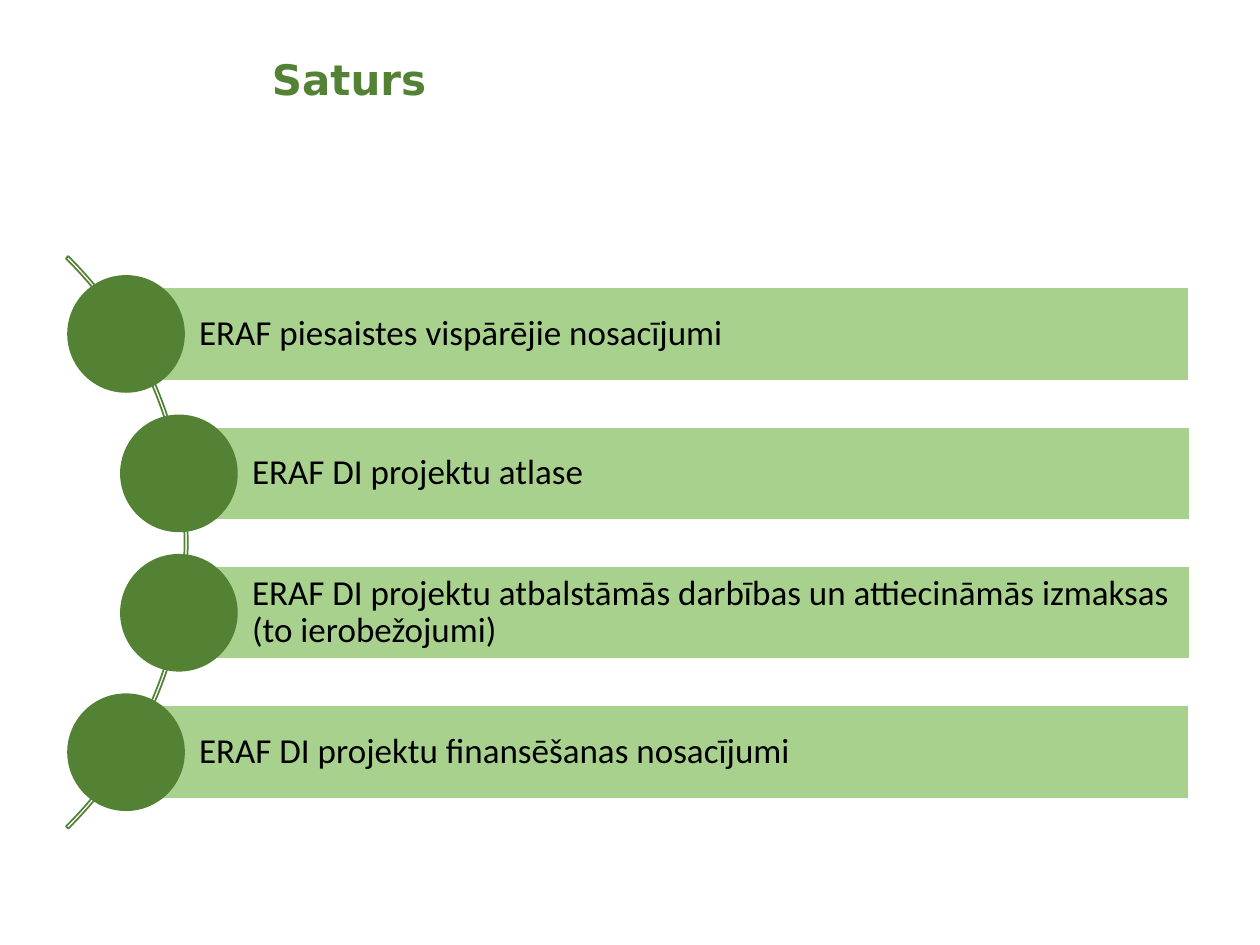
import pptx
import pptx.util
import pptx.dml.color
import pptx.enum.shapes
import pptx.enum.text

Inches = pptx.util.Inches
Pt = pptx.util.Pt
RGBColor = pptx.dml.color.RGBColor
KIND = pptx.enum.shapes.MSO_SHAPE
ANCHOR = pptx.enum.text.MSO_ANCHOR
ALIGN = pptx.enum.text.PP_ALIGN

DARK = RGBColor(0x54, 0x82, 0x35)
LIGHT = RGBColor(0xA9, 0xD1, 0x8E)
WHITE = RGBColor(0xFF, 0xFF, 0xFF)
BLACK = RGBColor(0x00, 0x00, 0x00)

ITEMS = [
    (1.0, "ERAF piesaistes vispārējie nosacījumi"),
    (1.42, "ERAF DI projektu atlase"),
    (1.42, "ERAF DI projektu atbalstāmās darbības un attiecināmās izmaksas (to ierobežojumi)"),
    (1.0, "ERAF DI projektu finansēšanas nosacījumi"),
]
RIGHT = 9.44
FIRST = 2.65
LAST = 5.97
HIGH = 0.74
ROUND = 0.92


def write(shape, text, size, color, font="Calibri", bold=False,
          anchor=ANCHOR.MIDDLE, inset=(0.58, 0.06, 0.06, 0.06)):
    """Put one formatted paragraph into a shape."""
    frame = shape.text_frame
    frame.word_wrap = True
    frame.vertical_anchor = anchor
    (frame.margin_left, frame.margin_top,
     frame.margin_right, frame.margin_bottom) = map(Inches, inset)
    para = frame.paragraphs[0]
    para.alignment = ALIGN.LEFT
    para.line_spacing = 0.9
    run = para.add_run()
    run.text = text
    run.font.name = font
    run.font.size = Pt(size)
    run.font.bold = bold
    run.font.color.rgb = color


def draw(slide, kind, left, top, width, height, fill, line):
    """Add a flat preset shape; a fill of None leaves it hollow."""
    shape = slide.shapes.add_shape(
        kind, Inches(left), Inches(top), Inches(width), Inches(height))
    shape.shadow.inherit = False
    if fill is None:
        shape.fill.background()
    else:
        shape.fill.solid()
        shape.fill.fore_color.rgb = fill
    shape.line.color.rgb = line
    shape.line.width = Pt(1)
    return shape


def add_title(slide):
    """Add the slide heading."""
    box = slide.shapes.add_textbox(
        Inches(2.06), Inches(0.42), Inches(7.44), Inches(1.13))
    write(box, "Saturs", 24, DARK, font="DejaVu Sans", bold=True,
          anchor=ANCHOR.TOP, inset=(0.1, 0.05, 0.1, 0.05))


def add_arc(slide):
    """Add the thin arc that runs behind the circles."""
    arc = draw(slide, KIND.BLOCK_ARC, -4.95, 1.1, 6.44, 6.41, None, DARK)
    for i, value in enumerate((189, 27, 0.004)):
        arc.adjustments[i] = value


def add_item(slide, left, mid, text):
    """Add a bar with its circle centred on the bar's left edge."""
    bar = draw(slide, KIND.RECTANGLE, left, mid - HIGH / 2,
               RIGHT - left, HIGH, LIGHT, WHITE)
    write(bar, text, 20, BLACK)
    draw(slide, KIND.OVAL, left - ROUND / 2, mid - ROUND / 2,
         ROUND, ROUND, DARK, DARK)


def main():
    """Build the contents slide."""
    deck = pptx.Presentation()
    deck.slide_width = Inches(10)
    deck.slide_height = Inches(7.5)
    slide = deck.slides.add_slide(deck.slide_layouts[6])
    add_title(slide)
    add_arc(slide)
    step = (LAST - FIRST) / (len(ITEMS) - 1)
    for i, (left, text) in enumerate(ITEMS):
        add_item(slide, left, FIRST + i * step, text)
    deck.save("out.pptx")


if __name__ == "__main__":
    main()
